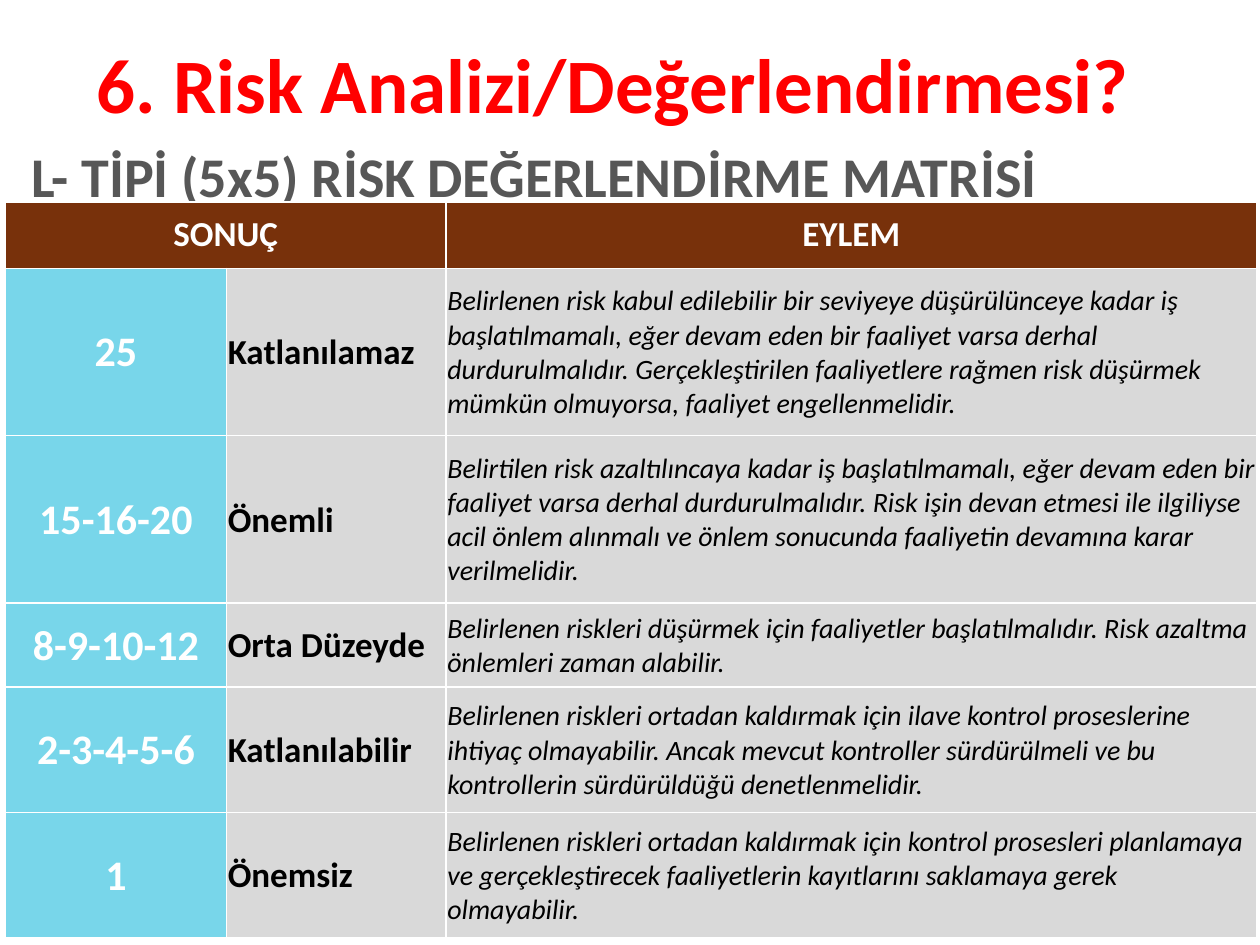
from dataclasses import dataclass

import pptx
import pptx.dml.color
import pptx.enum.text
import pptx.oxml
import pptx.oxml.ns
import pptx.util

Pt = pptx.util.Pt
Align = pptx.enum.text.PP_ALIGN
Anchor = pptx.enum.text.MSO_ANCHOR


@dataclass(frozen=True)
class Theme:
    font: str = "Calibri"
    red: str = "FF0000"
    grey: str = "575757"
    brown: str = "78310B"
    blue: str = "78D6EA"
    light: str = "D9D9D9"
    white: str = "FFFFFF"
    black: str = "000000"
    title: int = 44
    subtitle: int = 32
    score: int = 24
    label: int = 20
    body: int = 16


T = Theme()

HEADERS = ["SONUÇ", "", "EYLEM"]
RISKS = [
    ("25", "Katlanılamaz",
     "Belirlenen risk kabul edilebilir bir seviyeye düşürülünceye kadar iş "
     "başlatılmamalı, eğer devam eden bir faaliyet varsa derhal durdurulmalıdır. "
     "Gerçekleştirilen faaliyetlere rağmen risk düşürmek mümkün olmuyorsa, "
     "faaliyet engellenmelidir."),
    ("15-16-20", "Önemli",
     "Belirtilen risk azaltılıncaya kadar iş başlatılmamalı, eğer devam eden bir "
     "faaliyet varsa derhal durdurulmalıdır. Risk işin devan etmesi ile ilgiliyse "
     "acil önlem alınmalı ve önlem sonucunda faaliyetin devamına karar verilmelidir."),
    ("8-9-10-12", "Orta Düzeyde",
     "Belirlenen riskleri düşürmek için faaliyetler başlatılmalıdır. Risk azaltma "
     "önlemleri zaman alabilir."),
    ("2-3-4-5-6", "Katlanılabilir",
     "Belirlenen riskleri ortadan kaldırmak için ilave kontrol proseslerine ihtiyaç "
     "olmayabilir. Ancak mevcut kontroller sürdürülmeli ve bu kontrollerin "
     "sürdürüldüğü denetlenmelidir."),
    ("1", "Önemsiz",
     "Belirlenen riskleri ortadan kaldırmak için kontrol prosesleri planlamaya ve "
     "gerçekleştirecek faaliyetlerin kayıtlarını saklamaya gerek olmayabilir."),
]
COL_WIDTHS = [126.5, 125.5, 463]
ROW_HEIGHTS = [38, 95.7, 95.7, 48, 71.7, 71.7]


def rgb(color):
    return pptx.dml.color.RGBColor.from_string(color)


def write(tf, text, size, color, align=Align.LEFT, bold=True, italic=False):
    """Fill a text frame with one uniformly formatted paragraph."""
    tf.word_wrap = True
    p = tf.paragraphs[0]
    p.text = text
    p.alignment = align
    p.font.name = T.font
    p.font.size = Pt(size)
    p.font.bold = bold
    p.font.italic = italic
    p.font.color.rgb = rgb(color)
    return p


def add_title(s, text):
    sp = s.shapes.title
    sp.left, sp.top, sp.width, sp.height = Pt(48), Pt(17), Pt(642), Pt(106)
    tf = sp.text_frame
    tf.auto_size = pptx.enum.text.MSO_AUTO_SIZE.NONE
    tf.vertical_anchor = Anchor.TOP
    write(tf, text, T.title, T.red)


def add_subtitle(s, text):
    sp = s.shapes.add_textbox(Pt(18), Pt(77), Pt(694), Pt(51))
    tf = sp.text_frame
    tf.margin_left = tf.margin_right = 0
    tf.vertical_anchor = Anchor.MIDDLE
    write(tf, text, T.subtitle, T.grey).line_spacing = 0.9


def style_cell(cell, fill, tight=True):
    """Centre the cell vertically, with white borders and a solid fill."""
    cell.vertical_anchor = Anchor.MIDDLE
    if tight:
        cell.margin_left = cell.margin_right = cell.margin_top = Pt(0.7)
        cell.margin_bottom = 0
    tcPr = cell._tc.get_or_add_tcPr()
    for side in "LRTB":
        tcPr.append(pptx.oxml.parse_xml(
            f'<a:ln{side} {pptx.oxml.ns.nsdecls("a")} w="{Pt(1)}"><a:solidFill>'
            f'<a:srgbClr val="{T.white}"/></a:solidFill></a:ln{side}>'))
    cell.fill.solid()
    cell.fill.fore_color.rgb = rgb(fill)


def add_risk_table(s):
    frame = s.shapes.add_table(len(ROW_HEIGHTS), len(COL_WIDTHS), Pt(3), Pt(115.3),
                               Pt(sum(COL_WIDTHS)), Pt(sum(ROW_HEIGHTS)))
    table = frame.table
    for col, width in zip(table.columns, COL_WIDTHS):
        col.width = Pt(width)
    for row, height in zip(table.rows, ROW_HEIGHTS):
        row.height = Pt(height)

    # Header row
    table.cell(0, 0).merge(table.cell(0, 1))
    for c, text in enumerate(HEADERS):
        cell = table.cell(0, c)
        style_cell(cell, T.brown, tight=False)
        if text:
            write(cell.text_frame, text, T.label, T.white, Align.CENTER)

    # Score, level and action of each risk
    for r, (score, level, action) in enumerate(RISKS, start=1):
        cells = table.rows[r].cells
        for cell, fill in zip(cells, (T.blue, T.light, T.light)):
            style_cell(cell, fill)
        write(cells[0].text_frame, score, T.score, T.white, Align.CENTER)
        write(cells[1].text_frame, level, T.label, T.black)
        write(cells[2].text_frame, action, T.body, T.black, bold=False, italic=True)


def main():
    prs = pptx.Presentation()
    prs.slide_width, prs.slide_height = Pt(720), Pt(540)
    s = prs.slides.add_slide(prs.slide_layouts[5])
    add_title(s, "6. Risk Analizi/Değerlendirmesi?")
    add_subtitle(s, "L- TİPİ (5x5) RİSK DEĞERLENDİRME MATRİSİ")
    add_risk_table(s)
    prs.save("out.pptx")


if __name__ == "__main__":
    main()
